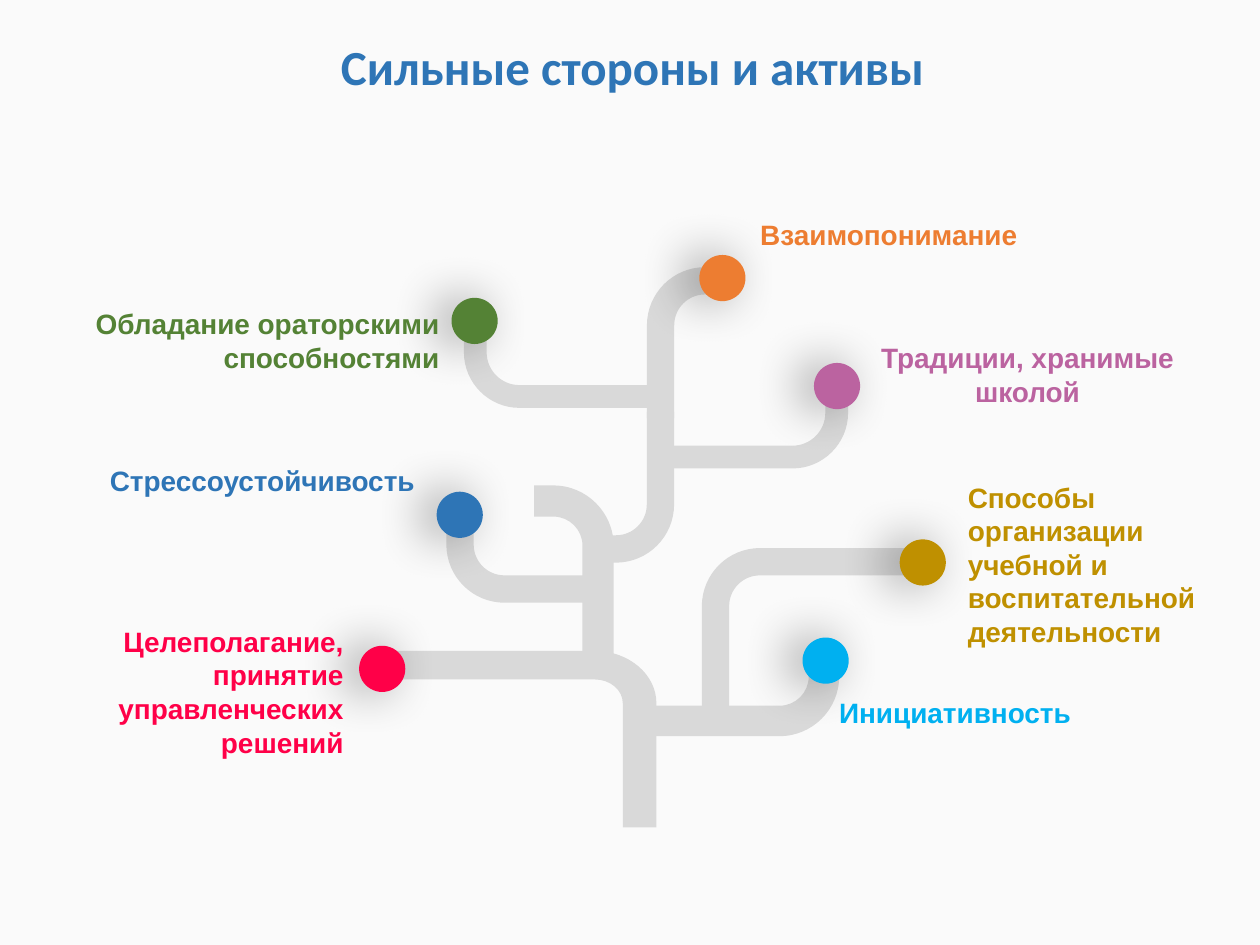
"""Build a slide with a branching tree of strengths and assets."""
from dataclasses import dataclass
from math import copysign

from lxml.etree import SubElement
from pptx import Presentation
from pptx.dml.color import RGBColor
from pptx.enum.shapes import MSO_SHAPE
from pptx.enum.text import MSO_ANCHOR, MSO_AUTO_SIZE, PP_ALIGN
from pptx.oxml.ns import qn
from pptx.util import Pt

LEFT, CENTER, RIGHT = PP_ALIGN.LEFT, PP_ALIGN.CENTER, PP_ALIGN.RIGHT


@dataclass(frozen=True)
class Theme:
    background: str = "FAFAFA"
    branch: str = "D9D9D9"
    title: str = "2E75B6"
    shadow: str = "000000"
    title_font: str = "Calibri"
    label_font: str = "Arial"
    title_size: float = 28
    label_size: float = 16


THEME = Theme()
TITLE = "Сильные стороны и активы"
TITLE_BOX = (187.6, 17.3, 584, 41)
DOT_SIZE = 26.4
ROUNDNESS = 0.55
OUTER_BEND, INNER_BEND = 1, 5

# bend centre, limb ends (x, y), inner and outer radius, vertical squash
BRANCHES = [
    ((340, 401.8), (217.4, 472.8), (15.9, 35.1), 0.85),
    ((445.5, 386.7), (365.8, 375.8), (16.6, 34), 1),
    ((452.9, 236), (380.2, 225.4), (18.7, 31.7), 1),
    ((316.3, 311.8), (305.3, 382.3), (16.6, 34.4), 1),
    ((434.2, 346.3), (527.8, 414.7), (17.5, 33.1), 1),
    ((296.8, 201.4), (375.1, 190.8), (18.7, 31.7), 1),
    ((288.2, 311.3), (341.3, 300.2), (17.5, 33.1), 1),
    ((352.1, 288.4), (341.3, 235.4), (17.5, 33.1), 1),
    ((402.8, 185.8), (414, 239), (17.5, 33.1), 1),
]

# label, colour, dot corner, label box, alignment
STRENGTHS = [
    ("Целеполагание, принятие управленческих решений", "FF0048",
     (205.2, 369), (0, 354.6, 200.6, 81.4), RIGHT),
    ("Стрессоустойчивость ", "2E75B6",
     (249.5, 281), (26.6, 262.8, 219.2, 23.8), RIGHT),
    ("Способы организации учебной и воспитательной деятельности", "BF9000",
     (514.1, 308.2), (548.7, 272.2, 171, 100.8), LEFT),
    ("Традиции, хранимые школой", "BB63A0",
     (465.1, 207.4), (478.1, 192.6, 218.2, 43.2), CENTER),
    ("Обладание ораторскими способностями", "548235",
     (258, 170.2), (25.2, 173.1, 230.2, 43.2), RIGHT),
    ("Взаимопонимание", "ED7D31",
     (399.6, 145.7), (430.1, 122.4, 255.6, 23.8), LEFT),
    ("Инициативность", "00B0F0",
     (458.6, 364.3), (475.2, 395.3, 170.6, 23.8), LEFT),
]


def rgb(value):
    return RGBColor.from_string(value)


def paint(shape, colour):
    shape.shadow.inherit = False
    shape.fill.solid()
    shape.fill.fore_color.rgb = rgb(colour)
    shape.line.fill.background()


def write(frame, text, font, size, colour, align):
    paragraph = frame.paragraphs[0]
    paragraph.alignment = align
    run = paragraph.add_run()
    run.text = text
    run.font.name, run.font.size, run.font.bold = font, Pt(size), True
    run.font.color.rgb = rgb(colour)


def round_bend(segments, index, corner_x_first):
    """Turn one straight segment of an outline into a quarter ellipse."""
    (x0, y0), (x1, y1) = [
        (int(segment[0].get("x")), int(segment[0].get("y")))
        for segment in segments[index - 1:index + 1]]
    corner_x, corner_y = (x0, y1) if corner_x_first else (x1, y0)
    bend = segments[index]
    bend.clear()
    bend.tag = qn("a:cubicBezTo")
    for x, y in ((x0, y0), (x1, y1)):
        SubElement(bend, qn("a:pt"),
                   x=str(round(x + ROUNDNESS * (corner_x - x))),
                   y=str(round(y + ROUNDNESS * (corner_y - y))))
    SubElement(bend, qn("a:pt"), x=str(x1), y=str(y1))


def add_branch(slide, centre, ends, radii, squash):
    (cx, cy), (end_x, end_y), (inner, outer) = centre, ends, radii
    side_x, side_y = copysign(1, cx - end_x), copysign(1, cy - end_y)

    def edge(radius):
        x, y = cx + side_x * radius, cy + side_y * radius * squash
        return [(end_x, y), (cx, y), (x, cy), (x, end_y)]

    start, *rest = [(Pt(x), Pt(y)) for x, y in edge(outer) + edge(inner)[::-1]]
    builder = slide.shapes.build_freeform(*start, scale=1.0)
    builder.add_line_segments(rest, close=True)
    branch = builder.convert_to_shape()
    paint(branch, THEME.branch)
    segments = list(branch.element.spPr.iter(qn("a:lnTo")))
    round_bend(segments, OUTER_BEND, False)
    round_bend(segments, INNER_BEND, True)


def add_dot(slide, corner, colour):
    dot = slide.shapes.add_shape(
        MSO_SHAPE.OVAL, *map(Pt, corner), Pt(DOT_SIZE), Pt(DOT_SIZE))
    paint(dot, colour)
    effects = dot.element.spPr.find(qn("a:effectLst"))
    shadow = SubElement(effects, qn("a:outerShdw"), blurRad=str(Pt(29)),
                        dist=str(Pt(8)), dir="10800000", rotWithShape="0")
    tint = SubElement(shadow, qn("a:srgbClr"), val=THEME.shadow)
    SubElement(tint, qn("a:alpha"), val="40000")


def add_label(slide, text, colour, box, align):
    frame = slide.shapes.add_textbox(*map(Pt, box)).text_frame
    frame.word_wrap = True
    frame.auto_size = MSO_AUTO_SIZE.SHAPE_TO_FIT_TEXT
    frame.margin_left = frame.margin_right = Pt(4.3)
    frame.margin_top = frame.margin_bottom = Pt(2.2)
    write(frame, text, THEME.label_font, THEME.label_size, colour, align)


def add_title(slide):
    title = slide.shapes.title
    title.left, title.top, title.width, title.height = map(Pt, TITLE_BOX)
    frame = title.text_frame
    frame.word_wrap = True
    frame.auto_size = MSO_AUTO_SIZE.NONE
    frame.vertical_anchor = MSO_ANCHOR.TOP
    write(frame, TITLE, THEME.title_font, THEME.title_size, THEME.title, LEFT)


def main():
    deck = Presentation()
    deck.slide_width, deck.slide_height = Pt(720), Pt(540)
    slide = deck.slides.add_slide(deck.slide_layouts[5])
    slide.background.fill.solid()
    slide.background.fill.fore_color.rgb = rgb(THEME.background)
    add_title(slide)
    for branch in BRANCHES:
        add_branch(slide, *branch)
    for _, colour, corner, _, _ in STRENGTHS:
        add_dot(slide, corner, colour)
    for text, colour, _, box, align in STRENGTHS:
        add_label(slide, text, colour, box, align)
    deck.save("out.pptx")


if __name__ == "__main__":
    main()
